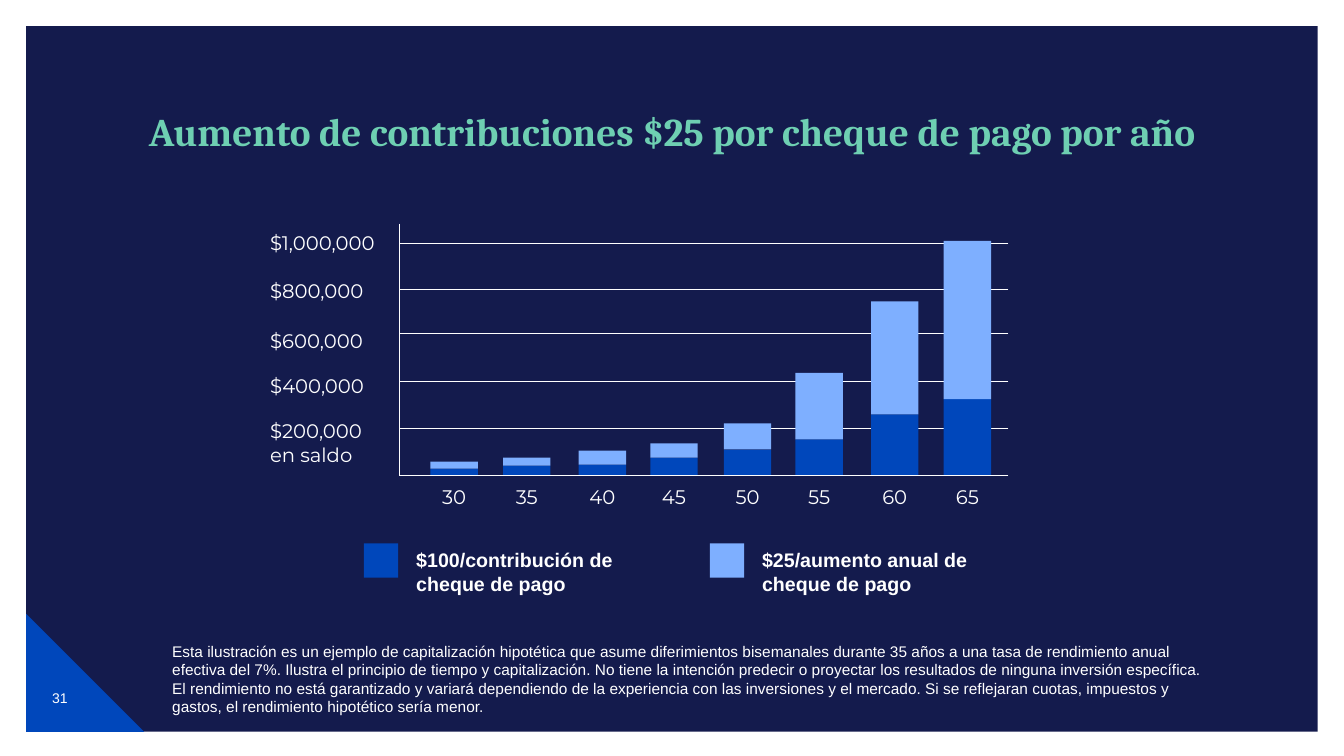
from dataclasses import dataclass

from lxml.etree import SubElement
from pptx import Presentation
from pptx.dml.color import RGBColor
from pptx.enum.shapes import MSO_CONNECTOR, MSO_SHAPE
from pptx.enum.text import MSO_ANCHOR, PP_ALIGN
from pptx.oxml.ns import qn
from pptx.slide import Slide
from pptx.text.text import TextFrame
from pptx.util import Inches, Pt

NAVY = RGBColor(0x14, 0x1B, 0x4D)
BLUE = RGBColor(0x00, 0x47, 0xBB)
SKY = RGBColor(0x7E, 0xAF, 0xFF)
MINT = RGBColor(0x6E, 0xCF, 0xB2)
WHITE = RGBColor(0xFF, 0xFF, 0xFF)

AXIS_LEFT, AXIS_RIGHT = 3.96, 10
AXIS_TOP, BASELINE = 2.22, 4.72
BAR_WIDTH = 0.47
AGE_WIDTH = 0.57
LEGEND_TOP, SWATCH = 5.39, 0.34


@dataclass(frozen=True)
class Bar:
    age: str
    left: float
    base_height: float
    increase_height: float


@dataclass(frozen=True)
class Level:
    label: str
    label_top: float
    line_y: float


@dataclass(frozen=True)
class LegendEntry:
    text: str
    left: float
    color: RGBColor


BARS = [
    Bar("30", 4.27, 0.07, 0.07),
    Bar("35", 4.99, 0.1, 0.08),
    Bar("40", 5.74, 0.11, 0.14),
    Bar("45", 6.45, 0.18, 0.14),
    Bar("50", 7.18, 0.26, 0.26),
    Bar("55", 7.89, 0.36, 0.66),
    Bar("60", 8.64, 0.61, 1.12),
    Bar("65", 9.36, 0.76, 1.57),
]
LEVELS = [
    Level("$1,000,000", 2.24, 2.41),
    Level("$800,000", 2.72, 2.87),
    Level("$600,000", 3.21, 3.31),
    Level("$400,000", 3.66, 3.78),
    Level("$200,000 en saldo", 4.11, 4.25),
]
LEGEND = [
    LegendEntry("$100/contribución de\vcheque de pago", 3.61, BLUE),
    LegendEntry("$25/aumento anual de\vcheque de pago", 7.04, SKY),
]
FOOTNOTE = (
    "Esta ilustración es un ejemplo de capitalización hipotética que asume "
    "diferimientos bisemanales durante 35 años a una tasa de rendimiento anual "
    "efectiva del 7%. Ilustra el principio de tiempo y capitalización. No tiene "
    "la intención predecir o proyectar los resultados de ninguna inversión "
    "específica. El rendimiento no está garantizado y variará dependiendo de la "
    "experiencia con las inversiones y el mercado. Si se reflejaran cuotas, "
    "impuestos y gastos, el rendimiento hipotético sería menor."
)


def write(frame: TextFrame, text: str, size: float, font: str,
          color: RGBColor = WHITE, bold: bool = False,
          align: PP_ALIGN = PP_ALIGN.LEFT) -> None:
    frame.word_wrap = True
    frame.text = text
    para = frame.paragraphs[0]
    para.alignment = align
    for span in para.runs:
        span.font.size = Pt(size)
        span.font.name = font
        span.font.bold = bold
        span.font.color.rgb = color


def add_text(page: Slide, left: float, top: float, width: float, height: float,
             text: str, size: float, font: str, bold: bool = False,
             align: PP_ALIGN = PP_ALIGN.LEFT,
             anchor: MSO_ANCHOR = MSO_ANCHOR.TOP) -> None:
    box = page.shapes.add_textbox(
        Inches(left), Inches(top), Inches(width), Inches(height))
    write(box.text_frame, text, size, font, bold=bold, align=align)
    box.text_frame.vertical_anchor = anchor


def add_block(page: Slide, left: float, top: float, width: float, height: float,
              color: RGBColor, kind: MSO_SHAPE = MSO_SHAPE.RECTANGLE) -> None:
    block = page.shapes.add_shape(
        kind, Inches(left), Inches(top), Inches(width), Inches(height))
    block.shadow.inherit = False
    block.fill.solid()
    block.fill.fore_color.rgb = color
    block.line.fill.background()


def add_line(page: Slide, x1: float, y1: float, x2: float, y2: float,
             weight: float) -> None:
    line = page.shapes.add_connector(
        MSO_CONNECTOR.STRAIGHT, Inches(x1), Inches(y1), Inches(x2), Inches(y2))
    line.line.color.rgb = WHITE
    line.line.width = Pt(weight)
    SubElement(line.element.spPr, qn("a:effectLst"))


def add_background(page: Slide) -> None:
    add_block(page, 0.26, 0.26, 12.81, 7, NAVY)
    add_block(page, 0.26, 6.09, 1.17, 1.17, BLUE, MSO_SHAPE.RIGHT_TRIANGLE)
    add_text(page, 0.32, 6.63, 0.55, 0.58, "31", 10, "Arial",
             align=PP_ALIGN.CENTER, anchor=MSO_ANCHOR.MIDDLE)


def place_title(page: Slide) -> None:
    title = page.shapes.title
    title.element.getparent().append(title.element)
    title.left, title.top = Inches(0), Inches(1.07)
    title.width, title.height = Inches(13.33), Inches(1.21)
    frame = title.text_frame
    write(frame, "Aumento de contribuciones $25 por cheque de pago por año",
          28, "Cambria", MINT, True, PP_ALIGN.CENTER)
    frame.margin_left = frame.margin_right = Inches(0)
    frame.vertical_anchor = MSO_ANCHOR.TOP
    frame.paragraphs[0].line_spacing = 0.9


def draw_bars(page: Slide) -> None:
    add_line(page, AXIS_LEFT, AXIS_TOP, AXIS_LEFT, BASELINE, 1)
    for level in LEVELS:
        add_line(page, AXIS_RIGHT, level.line_y, AXIS_LEFT, level.line_y, 0.5)
        label_height = 0.57 if "saldo" in level.label else 0.34
        add_text(page, 2.58, level.label_top, 1.37, label_height,
                 level.label, 14, "Montserrat")
    for bar in BARS:
        base_top = BASELINE - bar.base_height
        add_block(page, bar.left, base_top, BAR_WIDTH, bar.base_height, BLUE)
        add_block(page, bar.left, base_top - bar.increase_height, BAR_WIDTH,
                  bar.increase_height, SKY)
        add_text(page, bar.left - (AGE_WIDTH - BAR_WIDTH) / 2, 4.76, AGE_WIDTH,
                 0.34, bar.age, 14, "Montserrat", align=PP_ALIGN.CENTER)
    add_line(page, AXIS_RIGHT, BASELINE, AXIS_LEFT, BASELINE, 1)


def draw_legend(page: Slide) -> None:
    for entry in LEGEND:
        add_block(page, entry.left, LEGEND_TOP, SWATCH, SWATCH, entry.color)
        add_text(page, entry.left + 0.42, LEGEND_TOP, 3.27, 0.57,
                 entry.text, 14, "Arial", bold=True)


def main() -> None:
    deck = Presentation()
    deck.slide_width, deck.slide_height = Inches(13.33), Inches(7.5)
    page = deck.slides.add_slide(deck.slide_layouts[5])
    add_background(page)
    place_title(page)
    add_text(page, 1.61, 6.32, 10.53, 0.66, FOOTNOTE, 11, "Arial")
    draw_bars(page)
    draw_legend(page)
    deck.save("out.pptx")


if __name__ == "__main__":
    main()
